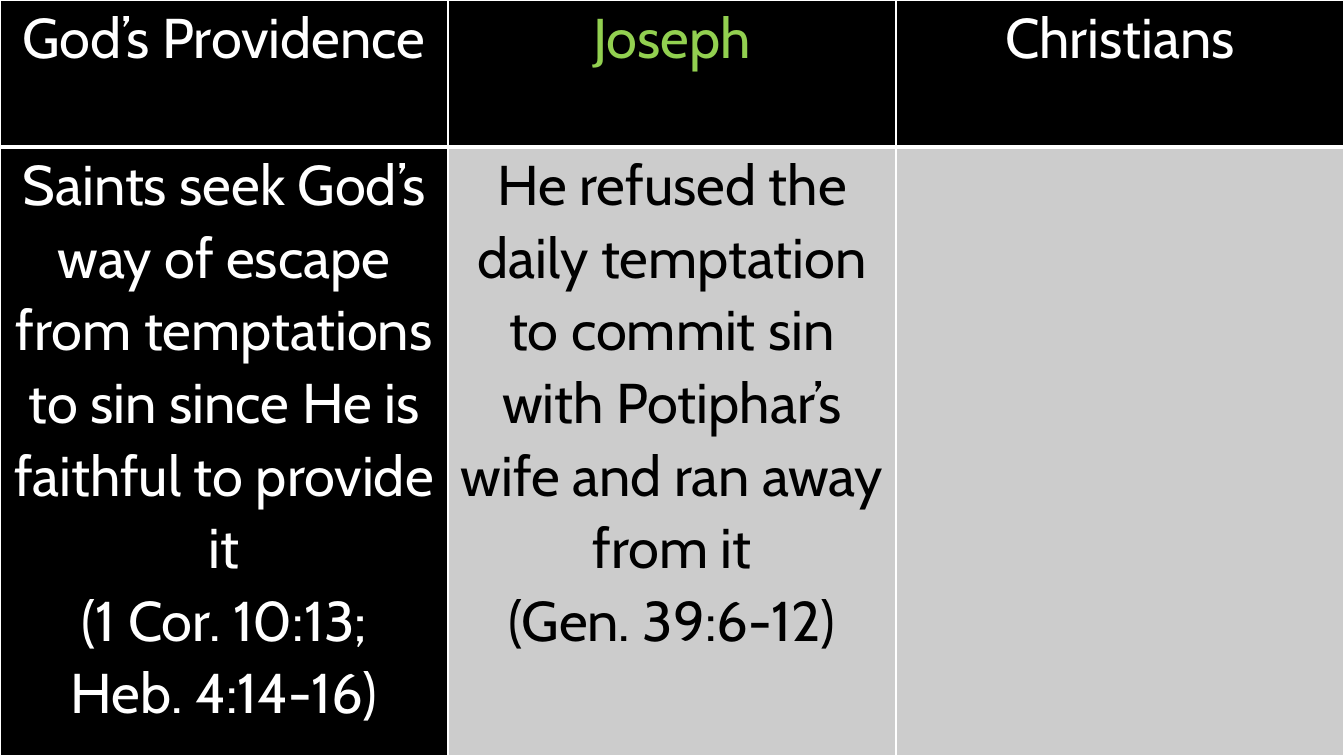
from lxml import etree
from pptx import Presentation, util as u
from pptx.dml.color import RGBColor
from pptx.enum import text
from pptx.oxml.ns import qn

COLORS = {"black": "000000", "white": "FFFFFF", "green": "92D050", "grey": "CCCCCC"}
HEADER_SHARE = 1.46 / 7.5
ROWS = [
    [
        (["God’s Providence"], "white", "black"),
        (["Joseph"], "green", "black"),
        (["Christians"], "white", "black"),
    ],
    [
        (["Saints seek God’s way of escape from temptations to sin since He is faithful to provide it",
          "(1 Cor. 10:13;", "Heb. 4:14-16)"], "white", "black"),
        (["He refused the daily temptation to commit sin with Potiphar’s wife and ran away from it",
          "(Gen. 39:6-12)"], "black", "grey"),
        ([], "black", "grey"),
    ],
]


def rgb(name):
    return RGBColor.from_string(COLORS[name])


def set_borders(cell, widths):
    tcPr = cell._tc.get_or_add_tcPr()
    for side, width in widths.items():
        ln = etree.SubElement(tcPr, qn(f"a:ln{side}"), w=str(u.Pt(width)))
        fill = etree.SubElement(ln, qn("a:solidFill"))
        etree.SubElement(fill, qn("a:srgbClr"), val=COLORS["white"])


def fill_cell(cell, lines, color, background, borders):
    set_borders(cell, borders)
    cell.fill.solid()
    cell.fill.fore_color.rgb = rgb(background)
    cell.margin_left = cell.margin_right = u.Inches(0.07)
    cell.margin_top = cell.margin_bottom = 0
    tf = cell.text_frame
    tf.text = "\n".join(lines)
    for p in tf.paragraphs:
        p.alignment = text.PP_ALIGN.CENTER
        p.line_spacing = 1.07
        p.font.name = "Cabin"
        p.font.size = u.Pt(40)
        p.font.bold = False
        p.font.color.rgb = rgb(color)


def add_comparison(s, left, top, width, height):
    table = s.shapes.add_table(len(ROWS), len(ROWS[0]), left, top, width, height).table
    table.horz_banding = False
    for column in table.columns:
        column.width = width // len(ROWS[0])
    table.rows[0].height = int(height * HEADER_SHARE)
    table.rows[1].height = height - table.rows[0].height
    for i, row in enumerate(ROWS):
        borders = {"L": 1, "R": 1, "T": 3 if i else 1, "B": 1 if i else 3}
        for j, (lines, color, background) in enumerate(row):
            fill_cell(table.cell(i, j), lines, color, background, borders)


def main():
    prs = Presentation()
    prs.slide_width, prs.slide_height = u.Inches(13.33), u.Inches(7.5)
    s = prs.slides.add_slide(prs.slide_layouts[6])
    s.background.fill.solid()
    s.background.fill.fore_color.rgb = rgb("black")
    add_comparison(s, 0, 0, prs.slide_width, prs.slide_height)
    prs.save("out.pptx")


if __name__ == "__main__":
    main()
